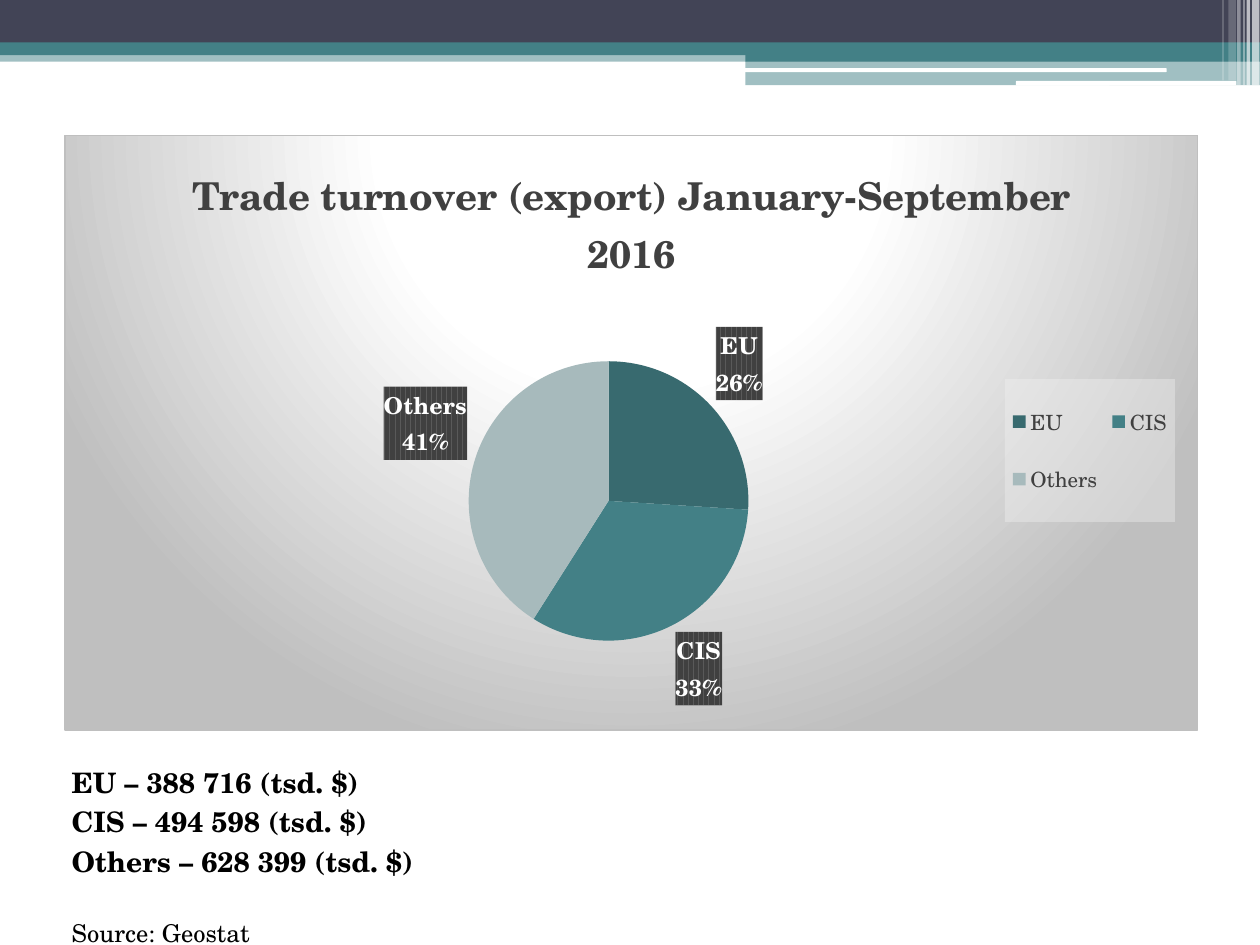
from typing import NamedTuple

from lxml.etree import SubElement
from pptx import Presentation
from pptx.chart.data import CategoryChartData
from pptx.dml.color import RGBColor
from pptx.enum.chart import XL_CHART_TYPE, XL_LABEL_POSITION, XL_LEGEND_POSITION
from pptx.enum.shapes import MSO_SHAPE
from pptx.oxml import parse_xml
from pptx.oxml.ns import nsdecls, qn
from pptx.util import Pt

FONT = "TeX Gyre Schola"
NAVY, TEAL, WHITE, BLACK, GREY = "424456", "438086", "FFFFFF", "000000", "404040"
TITLE = "Trade turnover (export) January-September 2016"


class Bar(NamedTuple):
    left: float
    top: float
    width: float
    height: float
    color: str
    alpha: int = 100
    rounded: bool = False


class Stripe(NamedTuple):
    left: float
    width: float
    height: float
    alpha: int


class Slice(NamedTuple):
    region: str
    share: int
    color: str
    turnover: str


BARS = [
    Bar(0, 28.8, 720, 6.5, TEAL, 50),
    Bar(0, 0, 720, 24.5, NAVY),
    Bar(0, 24.3, 720, 7.2, TEAL),
    Bar(426, 28, 294, 7.2, TEAL),
    Bar(426, 35, 294, 13.7, TEAL, 50),
    Bar(425.5, 39, 241.2, 2.2, WHITE, rounded=True),
    Bar(580.5, 46.3, 126, 2.6, WHITE, rounded=True),
]
STRIPES = [
    Stripe(715.5, 4.2, 48.8, 65),
    Stripe(712.3, 2, 48.8, 65),
    Stripe(710.5, 0.7, 48.8, 60),
    Stripe(707, 2, 48.8, 40),
    Stripe(702, 4.3, 46, 20),
    Stripe(698.5, 0.7, 46, 30),
]
SLICES = [
    Slice("EU", 26, "386A6F", "388 716"),
    Slice("CIS", 33, TEAL, "494 598"),
    Slice("Others", 41, "A7BABC", "628 399"),
]


def rgb(color: str) -> RGBColor:
    return RGBColor.from_string(color)


def style(font, size: float, color: str, bold: bool = False) -> None:
    font.name, font.size, font.bold = FONT, Pt(size), bold
    font.color.rgb = rgb(color)


def draw_bar(slide, bar: Bar) -> None:
    kind = MSO_SHAPE.ROUNDED_RECTANGLE if bar.rounded else MSO_SHAPE.RECTANGLE
    shape = slide.shapes.add_shape(
        kind, Pt(bar.left), Pt(bar.top), Pt(bar.width), Pt(bar.height))
    shape.shadow.inherit = False
    shape.line.fill.background()
    shape.fill.solid()
    shape.fill.fore_color.rgb = rgb(bar.color)
    if bar.alpha < 100:
        tint = shape.fill._xPr.find(".//" + qn("a:srgbClr"))
        SubElement(tint, qn("a:alpha")).set("val", str(bar.alpha * 1000))


def fill_before(text_props, fill: str) -> None:
    """Put shape properties right before the text properties of a chart part."""
    text_props.addprevious(
        parse_xml(f'<c:spPr {nsdecls("c", "a")}>{fill}</c:spPr>'))


def place(part, index: int, inner: bool, **box: float) -> None:
    """Give a chart part a manual layout, in fractions of the chart."""
    for old in part.findall(qn("c:layout")):
        part.remove(old)
    target = '<c:layoutTarget val="inner"/>' if inner else ""
    modes = '<c:xMode val="edge"/><c:yMode val="edge"/>'
    values = "".join(f'<c:{key} val="{value}"/>' for key, value in box.items())
    part.insert(index, parse_xml(
        f'<c:layout {nsdecls("c")}><c:manualLayout>{target}{modes}{values}'
        '</c:manualLayout></c:layout>'))


def solid(color: str, tag: str = "a:solidFill", extra: str = "") -> str:
    return f'<{tag}><a:srgbClr val="{color}">{extra}</a:srgbClr></{tag}>'


def draw_chart(slide) -> None:
    data = CategoryChartData()
    data.categories = [item.region for item in SLICES]
    data.add_series(TITLE, [item.share for item in SLICES])
    chart = slide.shapes.add_chart(
        XL_CHART_TYPE.PIE, Pt(36.7), Pt(77), Pt(648), Pt(340.5), data).chart
    style(chart.font, 10, BLACK)

    # Radial background
    stops = "".join(
        f'<a:gs pos="{at * 1000}"><a:srgbClr val="{color}"/></a:gs>'
        for at, color in [(0, WHITE), (39, WHITE), (100, "BFBFBF")])
    fill_before(
        chart._chartSpace.find(qn("c:txPr")),
        f'<a:gradFill><a:gsLst>{stops}</a:gsLst><a:path path="circle">'
        '<a:fillToRect l="50000" t="-80000" r="50000" b="180000"/></a:path>'
        f'</a:gradFill><a:ln w="{Pt(0.75)}">{solid("BFBFBF")}</a:ln>')

    # Title
    chart.has_title = True
    heading = chart.chart_title.text_frame
    heading.text = TITLE
    style(heading.paragraphs[0].runs[0].font, 22, GREY, True)

    # Slices
    plot = chart.plots[0]
    plot.vary_by_categories = True
    series = plot.series[0]
    for index, item in enumerate(SLICES):
        fill = series.points[index].format.fill
        fill.solid()
        fill.fore_color.rgb = rgb(item.color)
    place(chart._chartSpace.chart.plotArea, 0, True, x=0.355, y=0.38, w=0.25, h=0.47)

    # Slice labels
    labels = series.data_labels
    labels.show_value = False
    labels.show_category_name = labels.show_percentage = True
    labels.number_format, labels.number_format_is_linked = "0%", False
    labels.position = XL_LABEL_POSITION.OUTSIDE_END
    style(labels.font, 13.3, WHITE, True)
    label_xml = labels._element
    fill_before(
        label_xml.find(qn("c:txPr")),
        f'<a:pattFill prst="dkVert">{solid(GREY, "a:fgClr")}'
        f'{solid("595959", "a:bgClr")}</a:pattFill>')
    label_xml.find(qn("c:showBubbleSize")).addnext(
        parse_xml(f'<c:separator {nsdecls("c")}>\n</c:separator>'))

    # Legend
    chart.has_legend = True
    legend = chart.legend
    legend.position = XL_LEGEND_POSITION.RIGHT
    legend.include_in_layout = False
    style(legend.font, 12, GREY)
    fill_before(legend._element.find(qn("c:txPr")),
                solid("F2F2F2", extra='<a:alpha val="39000"/>'))
    place(legend._element, 1, False, x=0.83, y=0.41, w=0.15, h=0.24)


def draw_figures(slide) -> None:
    frame = slide.shapes.add_textbox(Pt(25.2), Pt(434), Pt(648), Pt(95)).text_frame
    frame.word_wrap = True
    lines = [f"{item.region} – {item.turnover} (tsd. $)" for item in SLICES]
    frame.text = "\n".join(lines + ["Source: Geostat"])
    for paragraph in frame.paragraphs:
        is_source = paragraph is frame.paragraphs[-1] or paragraph.text.startswith("Source")
        paragraph.space_before = Pt(23 if is_source else 3)
        paragraph._p.get_or_add_pPr().set("marL", str(Pt(8.64)))
        style(paragraph.runs[0].font, 14 if is_source else 16.1, BLACK, not is_source)


def main() -> None:
    deck = Presentation()
    deck.slide_width, deck.slide_height = Pt(720), Pt(540)
    slide = deck.slides.add_slide(deck.slide_layouts[6])

    # Header bands and the light stripes at their right end
    for bar in BARS:
        draw_bar(slide, bar)
    for stripe in STRIPES:
        draw_bar(slide, Bar(stripe.left, 0, stripe.width, stripe.height,
                            WHITE, stripe.alpha))

    draw_chart(slide)
    draw_figures(slide)
    deck.save("out.pptx")


if __name__ == "__main__":
    main()
